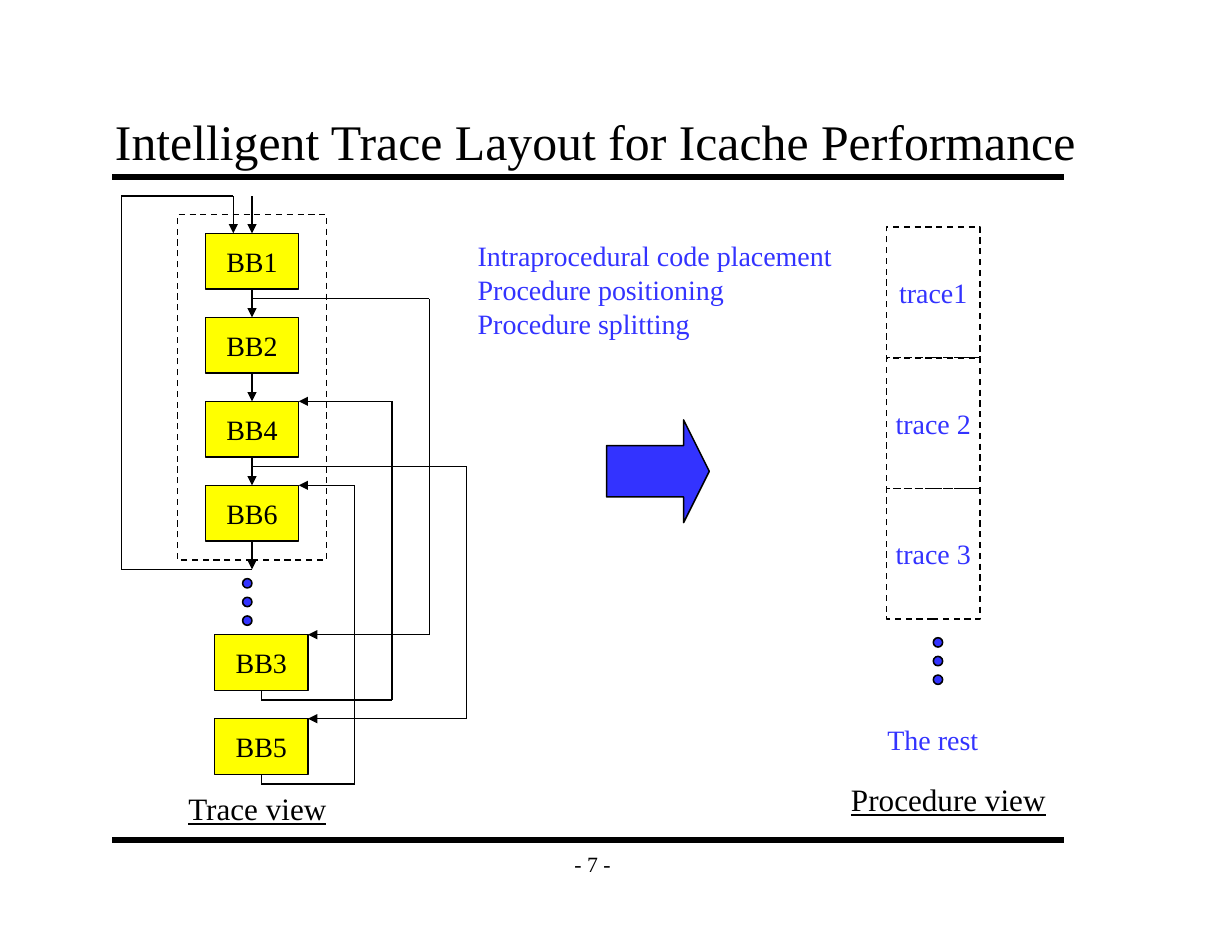
from dataclasses import dataclass
from pptx import Presentation
from pptx.dml.color import RGBColor
from pptx.enum.dml import MSO_LINE_DASH_STYLE as Dash
from pptx.enum.shapes import MSO_CONNECTOR_TYPE as Link, MSO_SHAPE as Shape
from pptx.enum.text import MSO_ANCHOR as Anchor, MSO_AUTO_SIZE as Fit, PP_ALIGN as Align
from pptx.oxml.ns import qn
from pptx.util import Inches, Pt
from lxml.etree import SubElement

COLORS = {"ink": "000000", "block": "FFFF00", "accent": "3333FF"}
FONT = "Times New Roman"
COLUMNS, ROWS = 132, 102
BLOCK_W, BLOCK_H = 10, 6


def unit(cells):
    return Inches(cells / 12)


@dataclass
class Box:
    left: float
    top: float

    def place(self, x, y):
        return unit(self.left + x), unit(self.top + y)

    def frame(self, x, y, width, height):
        return *self.place(x, y), unit(width), unit(height)


def color(name):
    return RGBColor.from_string(COLORS[name])


def write(frame, lines, size, ink="ink", align=Align.LEFT, anchor=Anchor.TOP,
          wrap=False, underline=False):
    frame.word_wrap = wrap
    frame.auto_size = Fit.NONE
    frame.vertical_anchor = anchor
    for index, line in enumerate(lines):
        para = frame.add_paragraph() if index else frame.paragraphs[0]
        para.alignment = align
        span = para.add_run()
        span.text = line
        span.font.name = FONT
        span.font.size = Pt(size)
        span.font.color.rgb = color(ink)
        if underline:
            span.font.underline = True


def add_label(page, area, lines, size, **style):
    label = page.shapes.add_textbox(*area)
    write(label.text_frame, lines, size, **style)
    return label


def add_figure(page, kind, area, fill=None, dashed=False, text=None, ink="ink"):
    figure = page.shapes.add_shape(kind, *area)
    figure.shadow.inherit = False
    if fill:
        figure.fill.solid()
        figure.fill.fore_color.rgb = color(fill)
    else:
        figure.fill.background()
    figure.line.color.rgb = color("ink")
    figure.line.width = Pt(1)
    if dashed:
        figure.line.dash_style = Dash.DASH
    if text:
        write(figure.text_frame, [text], 18, ink, Align.CENTER, Anchor.MIDDLE)
    return figure


def add_route(page, box, points, width=1, arrow=True):
    for start, end in zip(points, points[1:]):
        line = page.shapes.add_connector(Link.STRAIGHT, *box.place(*start), *box.place(*end))
        line.line.color.rgb = color("ink")
        line.line.width = Pt(width)
        properties = line._element.spPr
        if arrow and end == points[-1]:
            SubElement(properties.find(qn("a:ln")), qn("a:tailEnd"), type="triangle")
        SubElement(properties, qn("a:effectLst"))


def add_dots(page, box, x, y):
    for step in range(3):
        add_figure(page, Shape.OVAL, box.frame(x, y + 2 * step, 1, 1), "accent")


def draw_frame(page, box):
    for y in (19, 90):
        add_route(page, box, [(12, y), (114, y)], 4, arrow=False)
    title = page.shapes.title
    title.left, title.top, title.width, title.height = box.frame(11, 11, 108, 8)
    write(title.text_frame, ["Intelligent Trace Layout for Icache Performance"], 32,
          anchor=Anchor.BOTTOM, wrap=True)
    frame = title.text_frame
    frame.margin_left = frame.margin_right = Inches(0.11)
    frame.margin_top = frame.margin_bottom = Inches(0.06)
    add_label(page, box.frame(59, 90, 9, 5), ["- 7 -"], 14,
              align=Align.CENTER, anchor=Anchor.MIDDLE)


def draw_trace_view(page, box):
    main_x, side_x, pitch = 10, 11, 9
    middle, side_middle = main_x + BLOCK_W / 2, side_x + BLOCK_W / 2
    main_right, side_right = main_x + BLOCK_W, side_x + BLOCK_W
    tops = {name: 4 + pitch * row for row, name in enumerate(("BB1", "BB2", "BB4", "BB6"))}
    side_tops = {"BB3": 47, "BB5": 47 + pitch}
    for x, group in ((main_x, tops), (side_x, side_tops)):
        for name, y in group.items():
            add_figure(page, Shape.RECTANGLE, box.frame(x, y, BLOCK_W, BLOCK_H),
                       "block", text=name)
    add_figure(page, Shape.RECTANGLE, box.frame(7, 2, 16, 37), dashed=True)

    add_route(page, box, [(middle, 0), (middle, tops["BB1"])])
    for y in tops.values():
        add_route(page, box, [(middle, y + BLOCK_H), (middle, y + pitch)])
    loop_y = tops["BB6"] + pitch
    add_route(page, box, [(middle, loop_y), (1, loop_y), (1, 0), (13, 0), (13, tops["BB1"])])

    for source, target, lane in (("BB1", "BB3", 34), ("BB4", "BB5", 38)):
        start, end = tops[source] + BLOCK_H + 1, side_tops[target]
        add_route(page, box, [(middle, start), (lane, start), (lane, end), (side_right, end)])
    for source, target, lane in (("BB3", "BB4", 30), ("BB5", "BB6", 26)):
        start, end = side_tops[source] + BLOCK_H, tops[target]
        add_route(page, box, [(side_middle, start), (side_middle, start + 1),
                              (lane, start + 1), (lane, end), (main_right, end)])
    add_dots(page, box, 14, 41)
    add_label(page, box.frame(7, 63, 17.3, 5.2), ["Trace view"], 20, underline=True)


def draw_transformation(page, box):
    steps = ["Intraprocedural code placement", "Procedure positioning", "Procedure splitting"]
    add_label(page, box.frame(0, 0, 40.4, 12), steps, 18, ink="accent")
    arrow = add_figure(page, Shape.RIGHT_ARROW, box.frame(15, 20, 11, 11), "accent")
    arrow.adjustments[0] = 0.5
    arrow.adjustments[1] = 0.25


def draw_procedure_view(page, box):
    height = 14
    for row, name in enumerate(("trace1", "trace 2", "trace 3")):
        add_figure(page, Shape.RECTANGLE, box.frame(0, height * row, BLOCK_W, height),
                   dashed=True, text=name, ink="accent")
    add_dots(page, box, 5, 44)
    add_label(page, box.frame(-1.1, 52.5, 12.1, 4.8), ["The rest"], 18, ink="accent")
    add_label(page, box.frame(-5, 58.7, 23.3, 5.2), ["Procedure view"], 20, underline=True)


def main():
    deck = Presentation()
    deck.slide_width, deck.slide_height = unit(COLUMNS), unit(ROWS)
    page = deck.slides.add_slide(deck.slide_layouts.get_by_name("Title Only"))
    draw_frame(page, Box(0, 0))
    draw_trace_view(page, Box(12, 21))
    draw_transformation(page, Box(50, 25))
    draw_procedure_view(page, Box(95, 24.33))
    deck.save("out.pptx")


if __name__ == "__main__":
    main()
